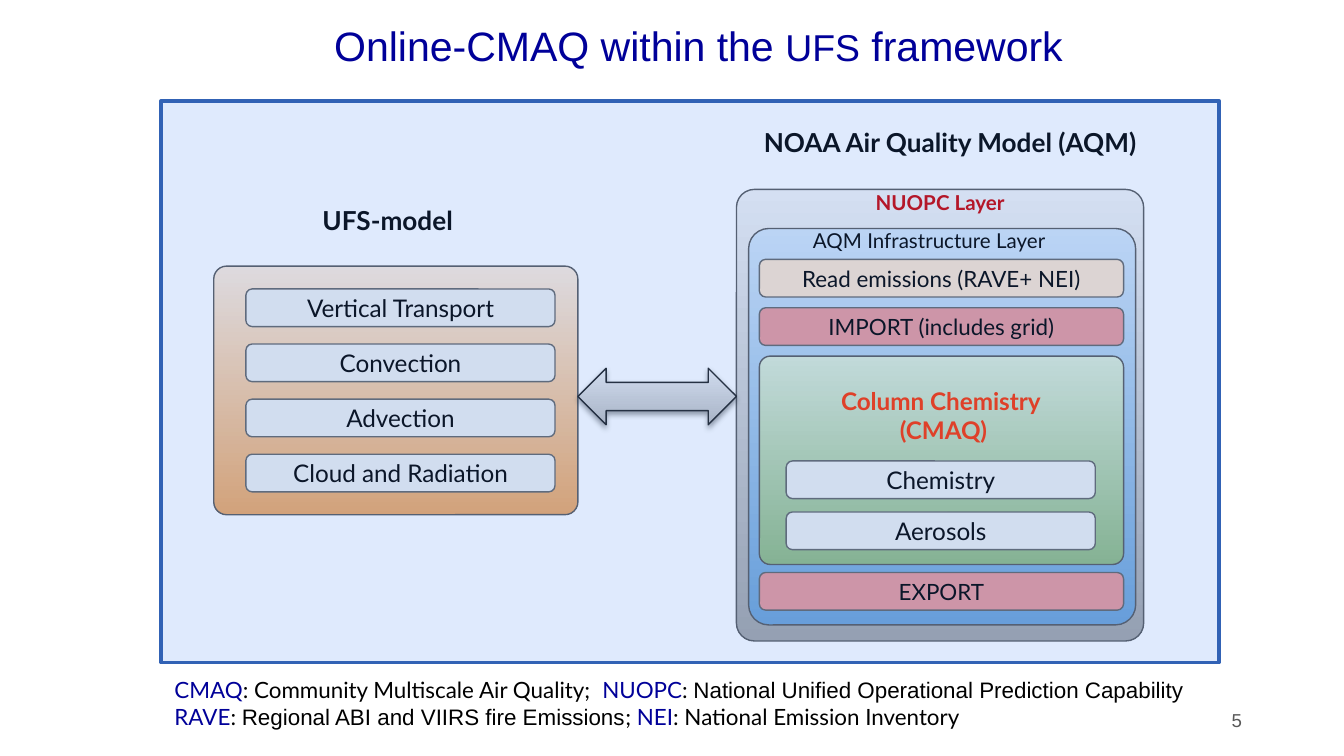
from lxml import etree
from pptx import Presentation
from pptx.dml.color import RGBColor
from pptx.enum.shapes import MSO_SHAPE
from pptx.enum.text import MSO_ANCHOR, PP_ALIGN
from pptx.oxml.ns import qn
from pptx.util import Inches, Pt

LEFT, CENTER, RIGHT = PP_ALIGN.LEFT, PP_ALIGN.CENTER, PP_ALIGN.RIGHT
TOP, MIDDLE = MSO_ANCHOR.TOP, MSO_ANCHOR.MIDDLE
ROUNDED, RECTANGLE = MSO_SHAPE.ROUNDED_RECTANGLE, MSO_SHAPE.RECTANGLE
DOUBLE_ARROW = MSO_SHAPE.LEFT_RIGHT_ARROW

BLACK, NAVY, RED, ORANGE = "000000", "000099", "CC0000", "FF3300"
GRAY, PINK, PEACH = "EFEFEF", "EA9999", "FCE5CD"
PANEL_LINE, BOX_LINE = "595959", "666666"
BOX_HEIGHT = 0.28

# box, corner adjustment, top colour, bottom colour
MODEL_PANEL = ((1.59, 1.98, 2.71, 1.85), 0.052, "FDECDB", "F0A963")
NUOPC_PANEL = ((5.48, 1.41, 3.03, 3.36), 0.044, "F2F2F2", "A6A6A6")
AQM_PANEL = ((5.57, 1.70, 2.88, 2.95), 0.052, "D4E5F5", "70A4D5")
CHEMISTRY_PANEL = ((5.65, 2.65, 2.71, 1.55), 0.052, "DCECD5", "93BC81")
PANELS = [MODEL_PANEL, NUOPC_PANEL, AQM_PANEL, CHEMISTRY_PANEL]

# left, first top, step, width, size, [(text, fill)]
STACKS = [
    (1.83, 2.15, 0.41, 2.3, 13, [
        ("Vertical Transport", GRAY), ("Convection", GRAY),
        ("Advection", GRAY), ("Cloud and Radiation", GRAY)]),
    (5.65, 1.93, 0.36, 2.71, 12, [
        ("Read emissions (RAVE+ NEI)", PEACH), ("IMPORT (includes grid)", PINK)]),
    (5.85, 3.43, 0.38, 2.3, 13, [("Chemistry", GRAY), ("Aerosols", GRAY)]),
    (5.65, 4.26, 0, 2.71, 12, [("EXPORT", PINK)]),
]

# box, lines, size, colour, bold, alignment
LABELS = [
    ((2.25, 1.42, 1.27, 0.32), ["UFS-model"], 14, BLACK, True, CENTER),
    ((5.48, 0.84, 3.18, 0.32), ["NOAA Air Quality Model (AQM)"], 14, BLACK, True, CENTER),
    ((5.94, 1.32, 2.11, 0.28), ["NUOPC Layer"], 11, RED, True, CENTER),
    ((5.95, 1.62, 2.11, 0.17), ["AQM Infrastructure Layer"], 11, BLACK, False, LEFT),
    ((5.74, 2.77, 2.56, 0.28), ["Column Chemistry ", "(CMAQ)"], 13, ORANGE, True, CENTER),
]

TITLE = [(" Online-CMAQ within the ", 22), ("UFS", 20), (" framework", 22)]

GLOSSARY = [
    [("CMAQ", "Lato", NAVY),
     (": Community Multiscale Air Quality;  ", "Lato", BLACK),
     ("NUOPC", "Lato", NAVY), (": ", "Lato", BLACK),
     ("National Unified Operational Prediction Capability", "Arial", BLACK)],
    [("RAVE", "Lato", NAVY), (": ", "Lato", BLACK),
     ("Regional ABI and VIIRS fire Emissions", "Arial", BLACK),
     ("; ", "Lato", BLACK), ("NEI", "Lato", NAVY),
     (": National Emission Inventory", "Lato", BLACK)],
]


def color(value):
    return RGBColor.from_string(value)


def style_font(font, size, name, value, bold=False):
    font.size, font.name, font.bold = Pt(size), name, bold
    font.color.rgb = color(value)


def prepare_frame(shape, anchor, inset=0.1):
    frame = shape.text_frame
    frame.word_wrap = True
    frame.vertical_anchor = anchor
    frame.margin_left = frame.margin_right = Inches(inset)
    frame.margin_top = frame.margin_bottom = Inches(inset)
    return frame


def write_lines(frame, lines, size, name, value, bold=False, alignment=CENTER):
    frame.text = "\n".join(lines)
    for paragraph in frame.paragraphs:
        paragraph.alignment = alignment
        style_font(paragraph.font, size, name, value, bold)


def add_runs(paragraph, runs):
    for text, size, name, value in runs:
        run = paragraph.add_run()
        run.text = text
        style_font(run.font, size, name, value)


def add_text(slide, box, anchor=TOP, inset=0.1):
    return prepare_frame(slide.shapes.add_textbox(*map(Inches, box)), anchor, inset)


def add_shape(slide, kind, box, line, fills, width=0.75, angle=270):
    """One fill colour makes a solid shape, two make a gradient."""
    shape = slide.shapes.add_shape(kind, *map(Inches, box))
    shape.shadow.inherit = False
    shape.line.color.rgb = color(line)
    shape.line.width = Pt(width)
    if len(fills) == 1:
        shape.fill.solid()
        shape.fill.fore_color.rgb = color(fills[0])
    else:
        shape.fill.gradient()
        shape.fill.gradient_angle = angle
        for stop, value in zip(shape.fill.gradient_stops, fills):
            stop.color.rgb = color(value)
    return shape


def set_alpha(color_element, percent):
    etree.SubElement(color_element, qn("a:alpha"), val=str(percent * 1000))


def add_drop_shadow(shape):
    effects = shape.element.spPr.find(qn("a:effectLst"))
    shadow = etree.SubElement(
        effects, qn("a:outerShdw"), blurRad=str(Pt(3.1)), dist=str(Pt(1.6)),
        dir="5400000", rotWithShape="0")
    set_alpha(etree.SubElement(shadow, qn("a:srgbClr"), val=BLACK), 38)


def main():
    presentation = Presentation()
    presentation.slide_width = Inches(10)
    presentation.slide_height = Inches(10 * 9 / 16)
    slide = presentation.slides.add_slide(presentation.slide_layouts[6])

    title = add_text(slide, (0.51, 0.03, 9.29, 0.61), MIDDLE).paragraphs[0]
    title.alignment = CENTER
    add_runs(title, [(text, size, "Arial", NAVY) for text, size in TITLE])

    for box, corner, *fills in PANELS:
        panel = add_shape(slide, ROUNDED, box, PANEL_LINE, fills)
        panel.adjustments[0] = corner

    for left, top, step, width, size, entries in STACKS:
        for index, (text, fill) in enumerate(entries):
            box = (left, top + index * step, width, BOX_HEIGHT)
            shape = add_shape(slide, ROUNDED, box, BOX_LINE, [fill])
            write_lines(prepare_frame(shape, MIDDLE), [text], size, "Lato", BLACK)

    for box, lines, size, value, bold, alignment in LABELS:
        write_lines(add_text(slide, box), lines, size, "Lato", value, bold, alignment)

    glossary = add_text(slide, (1.2, 4.93, 8.34, 0.49))
    for index, entries in enumerate(GLOSSARY):
        paragraph = glossary.add_paragraph() if index else glossary.paragraphs[0]
        add_runs(paragraph, [(text, 12, name, value) for text, name, value in entries])

    arrow = add_shape(slide, DOUBLE_ARROW, (4.3, 2.74, 1.18, 0.42), "202020",
                      ["BDBDBD", "EEEEEE"], angle=90)
    add_drop_shadow(arrow)

    # The translucent frame lies over the whole diagram and tints it.
    frame = add_shape(slide, RECTANGLE, (1.2, 0.75, 7.87, 4.18), "3162B5",
                      ["4285F4"], width=2)
    set_alpha(frame.element.spPr.find(qn("a:solidFill"))[0], 17)

    number = add_text(slide, (7.06, 5.21, 2.25, 0.3), MIDDLE, 0.07)
    write_lines(number, ["5"], 10, "Arial", "595959", alignment=RIGHT)

    presentation.save("out.pptx")


if __name__ == "__main__":
    main()
